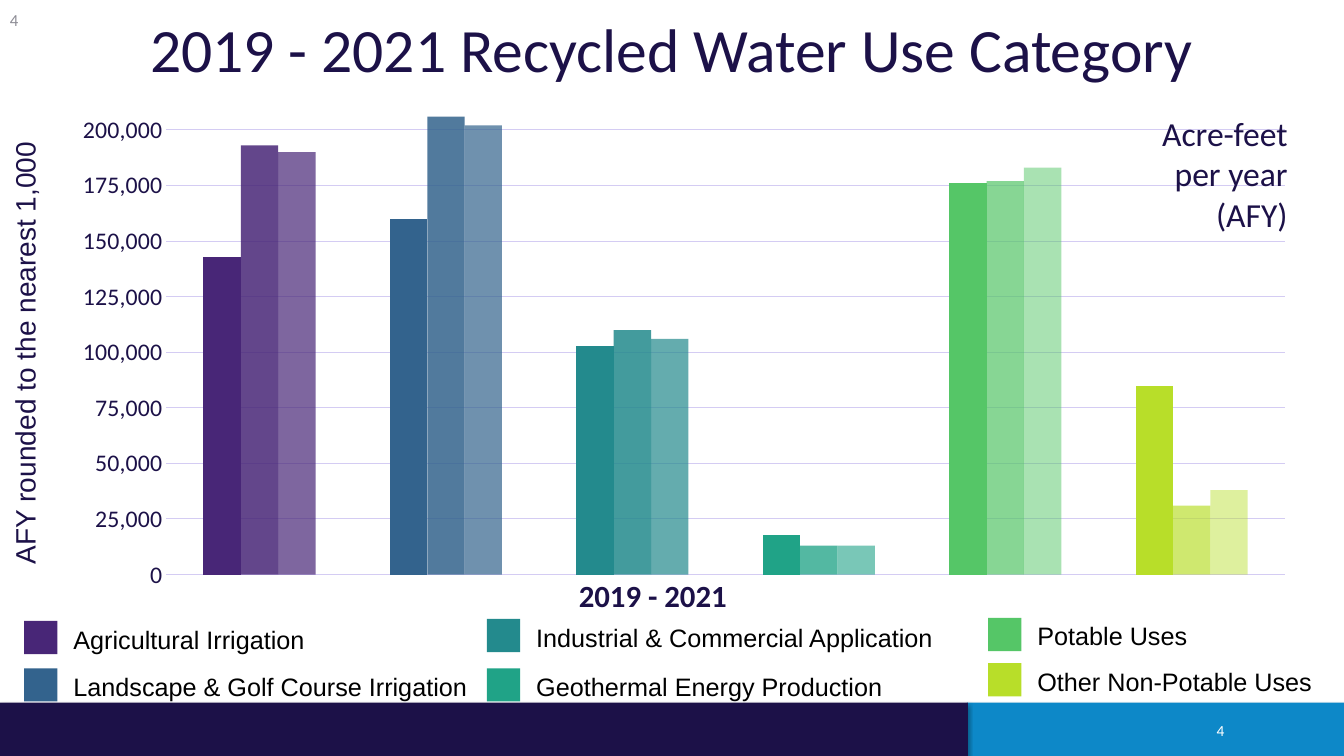
from dataclasses import dataclass

from lxml.etree import SubElement
from pptx import Presentation
from pptx.chart.data import CategoryChartData
from pptx.dml.color import RGBColor
from pptx.enum.chart import XL_CHART_TYPE, XL_TICK_MARK
from pptx.enum.shapes import MSO_SHAPE
from pptx.enum.text import MSO_ANCHOR, MSO_AUTO_SIZE, PP_ALIGN
from pptx.oxml.ns import qn
from pptx.shapes.autoshape import Shape
from pptx.slide import Slide
from pptx.util import Inches, Pt

NAVY = RGBColor(0x1C, 0x11, 0x48)
BLUE = RGBColor(0x0D, 0x88, 0xC8)
BLACK = RGBColor(0x00, 0x00, 0x00)
WHITE = RGBColor(0xFF, 0xFF, 0xFF)
GREY = RGBColor(0x8D, 0x8C, 0x95)
GRID = RGBColor(0xD4, 0xCC, 0xF3)
PURPLE = RGBColor(0x48, 0x26, 0x77)
STEEL = RGBColor(0x33, 0x63, 0x8D)
TEAL = RGBColor(0x23, 0x8A, 0x8D)
JADE = RGBColor(0x20, 0xA3, 0x87)
GREEN = RGBColor(0x55, 0xC6, 0x67)
LIME = RGBColor(0xB8, 0xDE, 0x29)

SWATCH_SIZE = 0.33
LABEL_OFFSET = 0.39


@dataclass(frozen=True)
class Label:
    text: str
    left: float
    top: float
    width: float
    height: float
    size: float
    font: str = "Calibri"
    color: RGBColor = NAVY
    align: PP_ALIGN = PP_ALIGN.LEFT
    anchor: MSO_ANCHOR = MSO_ANCHOR.TOP
    bold: bool = False
    wrap: bool = True
    spacing: float = 1.0
    rotation: float = 0


@dataclass(frozen=True)
class UseCategory:
    """A water use: its legend entry and its bars for the three years."""
    name: str
    color: RGBColor
    left: float
    top: float
    label_width: float
    volumes: tuple[int, int, int]
    opacities: tuple[int, int, int]


USES = [
    UseCategory("Agricultural Irrigation", PURPLE, 0.24, 6.16, 2.52,
                (143000, 193000, 190000), (100, 85, 70)),
    UseCategory("Landscape & Golf Course Irrigation", STEEL, 0.24, 6.63, 4.11,
                (160000, 206000, 202000), (100, 85, 70)),
    UseCategory("Industrial & Commercial Application", TEAL, 4.83, 6.14, 4.17,
                (103000, 110000, 106000), (100, 85, 70)),
    UseCategory("Geothermal Energy Production", JADE, 4.83, 6.63, 3.67,
                (18000, 13000, 13000), (100, 77, 60)),
    UseCategory("Potable Uses", GREEN, 9.8, 6.13, 1.7,
                (176000, 177000, 183000), (100, 70, 50)),
    UseCategory("Other Non-Potable Uses", LIME, 9.8, 6.58, 2.95,
                (85000, 31000, 38000), (100, 67, 45)),
]

FOOTER_NUMBER = Label("4", 11.88, 7.12, 0.45, 0.25, 11, color=WHITE,
                      align=PP_ALIGN.CENTER, anchor=MSO_ANCHOR.MIDDLE)
TITLE = Label("2019 - 2021 Recycled Water Use Category", 0.46, 0.14, 12.41, 0.86, 44,
              align=PP_ALIGN.CENTER, spacing=0.9)
CHART_LABELS = [
    Label("2019 - 2021", 5.47, 5.67, 2.01, 0.47, 22, align=PP_ALIGN.CENTER, bold=True),
    Label("AFY rounded to the nearest 1,000", -2.03, 3.2, 4.55, 0.44, 20, "Arial",
          rotation=270),
    Label("Acre-feet per year (AFY)", 11.1, 1.07, 1.77, 1.31, 24, align=PP_ALIGN.RIGHT),
    Label("4", 0, 0, 3, 0.4, 12, color=GREY, anchor=MSO_ANCHOR.MIDDLE),
]


def set_all(target: object, values: dict[str, object]) -> None:
    for name, value in values.items():
        setattr(target, name, value)


def add_label(page: Slide, label: Label) -> None:
    box = page.shapes.add_textbox(Inches(label.left), Inches(label.top),
                                  Inches(label.width), Inches(label.height))
    box.rotation = label.rotation
    set_all(box.text_frame, {"word_wrap": label.wrap, "vertical_anchor": label.anchor,
                             "auto_size": MSO_AUTO_SIZE.NONE})
    para = box.text_frame.paragraphs[0]
    set_all(para, {"alignment": label.align, "line_spacing": label.spacing})
    span = para.add_run()
    span.text = label.text
    set_all(span.font, {"name": label.font, "size": Pt(label.size), "bold": label.bold})
    span.font.color.rgb = label.color


def add_block(page: Slide, left: float, top: float, width: float, height: float,
              color: RGBColor) -> Shape:
    block = page.shapes.add_shape(MSO_SHAPE.RECTANGLE, Inches(left), Inches(top),
                                  Inches(width), Inches(height))
    block.shadow.inherit = False
    block.fill.solid()
    block.fill.fore_color.rgb = color
    block.line.fill.background()
    return block


def add_drop_shadow(block: Shape) -> None:
    effects = block._element.spPr.find(qn("a:effectLst"))
    shadow = SubElement(effects, qn("a:outerShdw"), blurRad=str(Pt(3.1)),
                        dist=str(Pt(1.8)), dir="5400000", rotWithShape="0")
    color = SubElement(shadow, qn("a:srgbClr"), val=str(BLACK))
    SubElement(color, qn("a:alpha"), val="35000")


def add_use_chart(page: Slide) -> None:
    data = CategoryChartData(number_format="#,##0")
    data.categories = [str(number) for number in range(1, len(USES) + 1)]
    for year in range(3):
        data.add_series(f"Series {year + 1}", [use.volumes[year] for use in USES])
    chart = page.shapes.add_chart(XL_CHART_TYPE.COLUMN_CLUSTERED, Inches(0.57), Inches(0.98),
                                  Inches(12.41), Inches(4.97), data).chart
    set_all(chart, {"has_legend": False, "has_title": False})
    set_all(chart.font, {"name": "Calibri", "size": Pt(10)})
    chart.font.color.rgb = NAVY
    chart.category_axis.visible = False

    axis = chart.value_axis
    set_all(axis, {"minimum_scale": 0, "maximum_scale": 210000, "major_unit": 25000,
                   "has_major_gridlines": True, "major_tick_mark": XL_TICK_MARK.NONE,
                   "minor_tick_mark": XL_TICK_MARK.NONE})
    set_all(axis.tick_labels, {"number_format": "#,##0", "number_format_is_linked": False})
    set_all(axis.tick_labels.font, {"name": "Calibri", "size": Pt(17)})
    axis.tick_labels.font.color.rgb = NAVY
    axis.format.line.fill.background()
    axis.major_gridlines.format.line.width = Pt(0.75)
    axis.major_gridlines.format.line.color.rgb = GRID

    plot = chart.plots[0]
    set_all(plot, {"gap_width": 199, "overlap": 0, "vary_by_categories": False})
    for year, series in enumerate(plot.series):
        for index, use in enumerate(USES):
            fill = series.points[index].format.fill
            fill.solid()
            fill.fore_color.rgb = use.color
            if use.opacities[year] < 100:
                color = series._element.xpath(
                    f'c:dPt[c:idx/@val="{index}"]/c:spPr/a:solidFill/a:srgbClr')[0]
                SubElement(color, qn("a:alpha"), val=str(use.opacities[year] * 1000))

    area = chart._chartSpace.chart.plotArea
    for old_layout in area.findall(qn("c:layout")):
        area.remove(old_layout)
    layout = SubElement(area, qn("c:layout"))
    area.insert(0, layout)
    manual = SubElement(layout, qn("c:manualLayout"))
    for tag, value in {"layoutTarget": "inner", "xMode": "edge", "yMode": "edge",
                       "x": "0.087", "y": "0.018", "w": "0.894", "h": "0.932"}.items():
        SubElement(manual, qn(f"c:{tag}"), val=value)


def add_legend_entry(page: Slide, use: UseCategory) -> None:
    add_block(page, use.left, use.top, SWATCH_SIZE, SWATCH_SIZE, use.color)
    add_label(page, Label(use.name, use.left + LABEL_OFFSET, use.top - 0.02, use.label_width,
                          0.4, 18, "Arial", BLACK, wrap=False))


def main() -> None:
    deck = Presentation()
    set_all(deck, {"slide_width": Inches(13.33), "slide_height": Inches(7.5)})
    page = deck.slides.add_slide(deck.slide_layouts[6])
    for left, width, color in ((9.59, 3.75, BLUE), (0, 9.6, NAVY)):
        add_drop_shadow(add_block(page, left, 6.97, width, 0.54, color))
    add_label(page, FOOTER_NUMBER)
    add_label(page, TITLE)
    add_use_chart(page)
    for use in USES:
        add_legend_entry(page, use)
    for label in CHART_LABELS:
        add_label(page, label)
    deck.save("out.pptx")


if __name__ == "__main__":
    main()
